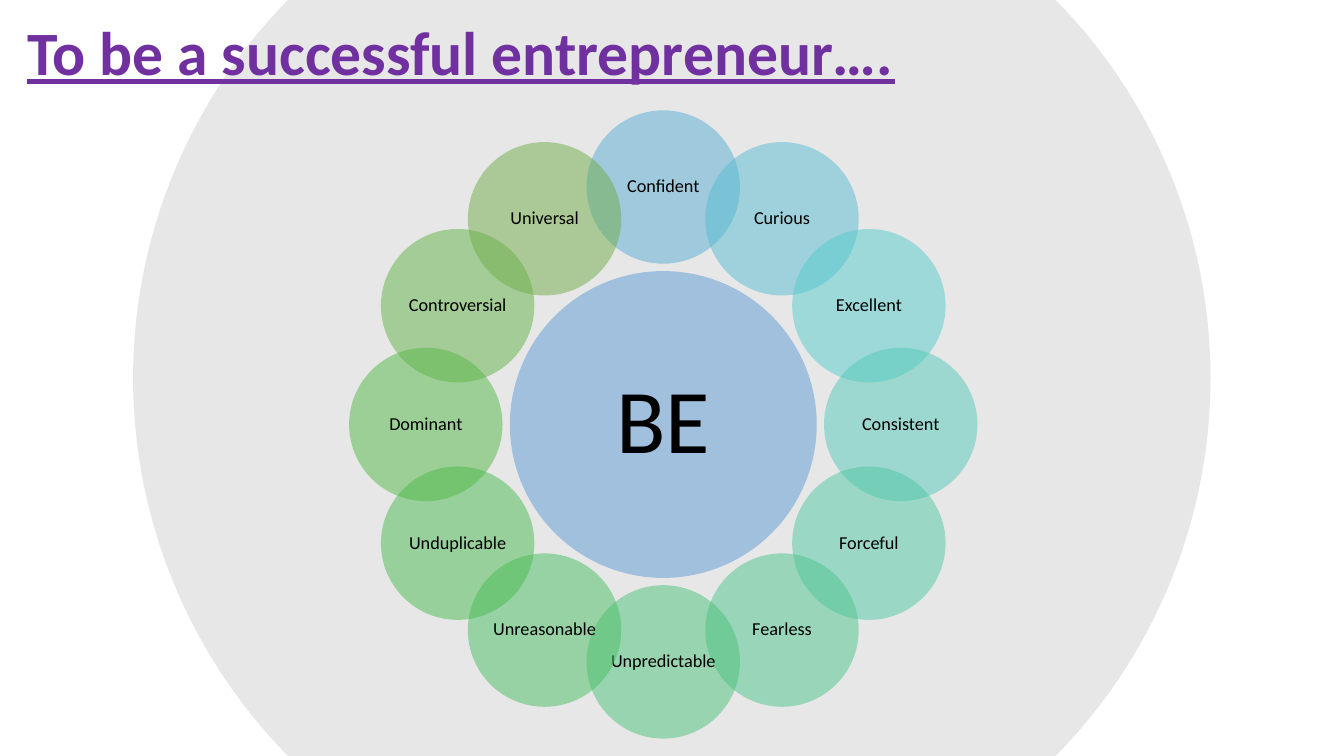
import math
from pptx import Presentation, util as u
from pptx.dml.color import RGBColor
from pptx.enum import shapes, text
from pptx.oxml.xmlchemy import OxmlElement

TITLE = "To be a successful entrepreneur…."
HUB = "BE"
TRAITS = [
    ("Confident", "59ACD2"), ("Curious", "56BCD0"), ("Excellent", "54CCCD"),
    ("Consistent", "52CAB8"), ("Forceful", "4FC8A3"), ("Fearless", "4DC58D"),
    ("Unpredictable", "4BC278"), ("Unreasonable", "49BF64"),
    ("Unduplicable", "48BB4F"), ("Dominant", "50B846"),
    ("Controversial", "61B247"), ("Universal", "70AD47"),
]
THEME = dict(font="Calibri", title="7030A0", ink="000000", hub="5B9BD5",
             backdrop="D9D9D9", title_size=44, hub_size=65, trait_size=13)
WIDTH, HEIGHT = 960, 540
CENTRE_X, CENTRE_Y = 473.8, 303.2
RING_RADIUS, HUB_SIZE, TRAIT_SIZE = 169.6, 219.2, 109.6
BACKDROP_X, BACKDROP_RADIUS = 479.9, 384.8


def fill(sp, color, opacity):
    sp.shadow.inherit = False
    sp.line.fill.background()
    sp.fill.solid()
    sp.fill.fore_color.rgb = RGBColor.from_string(color)
    alpha = OxmlElement("a:alpha")
    alpha.set("val", str(opacity * 1000))
    sp.fill._xPr.solidFill[0].append(alpha)


def write(sp, words, size, color, align):
    tf = sp.text_frame
    tf.vertical_anchor = text.MSO_ANCHOR.MIDDLE
    p = tf.paragraphs[0]
    p.text = words
    p.alignment = align
    p.line_spacing = 0.9
    p.font.name = THEME["font"]
    p.font.size = u.Pt(size)
    p.font.color.rgb = RGBColor.from_string(color)
    return tf, p


def add_backdrop(s):
    half = math.degrees(math.asin(HEIGHT / 2 / BACKDROP_RADIUS))
    steps = 60
    points = []
    for start in (-half, 180 - half):
        for i in range(steps + 1):
            a = math.radians(start + 2 * half * i / steps)
            points.append((u.Pt(BACKDROP_X + BACKDROP_RADIUS * math.cos(a)),
                           u.Pt(HEIGHT / 2 + BACKDROP_RADIUS * math.sin(a))))
    builder = s.shapes.build_freeform(*points[0])
    builder.add_line_segments(points[1:], close=True)
    fill(builder.convert_to_shape(), THEME["backdrop"], 62)


def add_title(s):
    sp = s.shapes.add_textbox(u.Pt(12.5), 0, u.Pt(828), u.Pt(79.2))
    tf, p = write(sp, TITLE, THEME["title_size"], THEME["title"], text.PP_ALIGN.LEFT)
    tf.word_wrap = True
    p.font.bold = p.font.underline = True


def add_circle(s, x, y, size, words, type_size, color):
    sp = s.shapes.add_shape(shapes.MSO_SHAPE.OVAL, u.Pt(x - size / 2),
                            u.Pt(y - size / 2), u.Pt(size), u.Pt(size))
    fill(sp, color, 50)
    tf, p = write(sp, words, type_size, THEME["ink"], text.PP_ALIGN.CENTER)
    tf.word_wrap = False
    tf.margin_left = tf.margin_right = tf.margin_top = tf.margin_bottom = u.Pt(1.3)


def main():
    prs = Presentation()
    prs.slide_width, prs.slide_height = u.Pt(WIDTH), u.Pt(HEIGHT)
    s = prs.slides.add_slide(prs.slide_layouts[6])
    add_backdrop(s)
    add_title(s)
    add_circle(s, CENTRE_X, CENTRE_Y, HUB_SIZE, HUB, THEME["hub_size"], THEME["hub"])
    for i, (trait, color) in enumerate(TRAITS):
        a = math.tau * i / len(TRAITS)
        add_circle(s, CENTRE_X + RING_RADIUS * math.sin(a),
                   CENTRE_Y - RING_RADIUS * math.cos(a),
                   TRAIT_SIZE, trait, THEME["trait_size"], color)
    prs.save("out.pptx")


if __name__ == "__main__":
    main()
